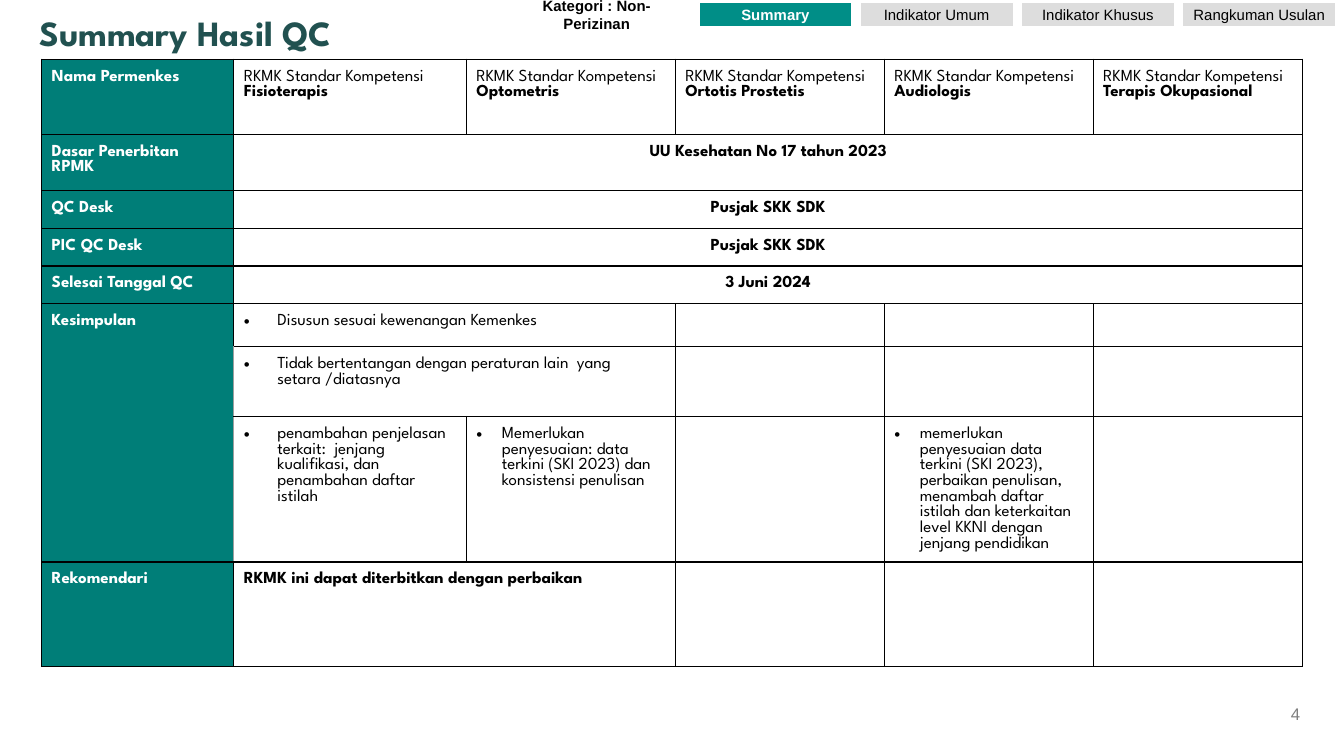
from pptx import Presentation, util as u
from pptx.dml.color import RGBColor
from pptx.enum import shapes, text
from pptx.oxml import parse_xml
from pptx.oxml.ns import nsdecls

HUES = {"head": "007E78", "live": "008E87", "tab": "DDDDDD", "title": "215150",
        "ink": "000000", "paper": "FFFFFF", "page": "7F7F7F", "soft": "9E9E9E"}
WIDE, TALL = 10, 10 * 9 / 16
SPAN = 9.38
COLS = [1.43, 1.73] + [(SPAN - 1.43 - 1.73) / 4] * 4
ROWS = [0.56, 0.42, 0.28, 0.28, 0.28, 0.32, 0.52, 0.97, 0.78]
TABS = ["Summary", "Indikator Umum", "Indikator Khusus", "Rangkuman Usulan"]
JOBS = ["Fisioterapis", "Optometris", "Ortotis Prostetis", "Audiologis", "Terapis Okupasional"]
HEADS = {0: "Nama Permenkes", 1: "Dasar Penerbitan RPMK", 2: "QC Desk", 3: "PIC QC Desk",
         4: "Selesai Tanggal QC", 5: "Kesimpulan", 8: "Rekomendari"}
FACTS = {1: "UU Kesehatan No 17 tahun 2023", 2: "Pusjak SKK SDK",
         3: "Pusjak SKK SDK", 4: "3 Juni 2024"}
NOTES = [
    (5, 1, 0.25, "Disusun sesuai kewenangan Kemenkes"),
    (6, 1, 0.25, "Tidak bertentangan dengan peraturan lain  yang setara /diatasnya"),
    (7, 1, 0.25, "penambahan penjelasan terkait:  jenjang kualifikasi, dan penambahan daftar istilah"),
    (7, 2, 0.19, "Memerlukan penyesuaian: data terkini (SKI 2023) dan konsistensi penulisan"),
    (7, 4, 0.19, "memerlukan penyesuaian data terkini (SKI 2023), perbaikan penulisan, menambah "
                 "daftar istilah dan keterkaitan level KKNI dengan jenjang pendidikan"),
]
SPANS = [(r, 1, r, 5) for r in FACTS] + [(r, 1, r, 2) for r in (5, 6, 8)] + [(5, 0, 7, 0)]
SIDES = ("left", "right", "top", "bottom")
INSET = 5.4


def hue(name):
    return RGBColor.from_string(HUES[name])


def put(obj, vals):
    for key, val in vals.items():
        setattr(obj, key, val)


def pad(obj, tall=INSET):
    put(obj, {"margin_" + s: u.Pt(tall if s in SIDES[2:] else INSET) for s in SIDES})


def write(par, words, color="ink", size=9, face="League Spartan", bold=False):
    run = par.add_run()
    run.text = words
    put(run.font, {"size": u.Pt(size), "name": face, "bold": bold})
    run.font.color.rgb = hue(color)


def frame(shape, words, align, tall=INSET, anchor=text.MSO_ANCHOR.MIDDLE, **look):
    box = shape.text_frame
    put(box, {"word_wrap": True, "auto_size": text.MSO_AUTO_SIZE.NONE, "vertical_anchor": anchor})
    pad(box, tall)
    par = box.paragraphs[0]
    par.alignment = align
    write(par, words, **look)
    return par


def label(slide, spot, words, align, **look):
    box = slide.shapes.add_textbox(*map(u.Inches, spot))
    frame(box, words, align, **look)


def tab(slide, num, words):
    live = num == 0
    spot = (5.2 + 1.2 * num, 0.02, 1.14, 0.18)
    box = slide.shapes.add_shape(shapes.MSO_SHAPE.RECTANGLE, *map(u.Inches, spot))
    box.shadow.inherit = False
    box.fill.solid()
    box.fill.fore_color.rgb = hue("live" if live else "tab")
    box.line.color.rgb = hue("paper")
    box.line.width = u.Pt(0.75)
    frame(box, words, text.PP_ALIGN.CENTER, size=8, face="Arial", bold=live,
          color="paper" if live else "ink")


def edge(cell, row, col):
    props = cell._tc.get_or_add_tcPr()
    for side in "LRTB":
        soft = row in (6, 7) and (side, col) in (("L", 1), ("R", 0))
        tint = HUES["soft" if soft else "ink"]
        props.append(parse_xml(
            f'<a:ln{side} {nsdecls("a")} w="9525"><a:solidFill>'
            f'<a:srgbClr val="{tint}"/></a:solidFill></a:ln{side}>'))


def dress(cell, row, col):
    pad(cell)
    edge(cell, row, col)
    if col:
        cell.fill.background()
    else:
        cell.fill.solid()
        cell.fill.fore_color.rgb = hue("head")
    end = parse_xml(f'<a:endParaRPr {nsdecls("a")} sz="900"/>')
    cell.text_frame.paragraphs[0]._p.append(end)


def bullet(par, dent):
    props = par._p.get_or_add_pPr()
    step = u.Inches(dent)
    props.set("marL", str(step))
    props.set("indent", str(-step))
    for part in (f'buClr {nsdecls("a")}><a:srgbClr val="{HUES["ink"]}"/></a:buClr',
                 f'buFont {nsdecls("a")} typeface="Arial"/',
                 f'buChar {nsdecls("a")} char="•"/'):
        props.append(parse_xml(f"<a:{part}>"))


def grid(slide):
    spot = (0.31, 0.44, SPAN, sum(ROWS))
    table = slide.shapes.add_table(len(ROWS), len(COLS), *map(u.Inches, spot)).table
    put(table, {"first_row": False, "horz_banding": False})
    for col, wide in zip(table.columns, COLS):
        col.width = u.Inches(wide)
    for row, tall in zip(table.rows, ROWS):
        row.height = u.Inches(tall)
    for row in range(len(ROWS)):
        for col in range(len(COLS)):
            dress(table.cell(row, col), row, col)
    for top, left, low, right in SPANS:
        table.cell(top, left).merge(table.cell(low, right))
    return table


def fill(table):
    def par(row, col):
        return table.cell(row, col).text_frame.paragraphs[0]

    for row, words in HEADS.items():
        write(par(row, 0), words, "paper", bold=True)
    for col, job in enumerate(JOBS, 1):
        write(par(0, col), "RKMK Standar Kompetensi ")
        write(par(0, col), job, bold=True)
    for row, words in FACTS.items():
        par(row, 1).alignment = text.PP_ALIGN.CENTER
        write(par(row, 1), words, bold=True)
    for row, col, dent, words in NOTES:
        bullet(par(row, col), dent)
        write(par(row, col), words)
    write(par(8, 1), "RKMK ini dapat diterbitkan dengan perbaikan", bold=True)


def main():
    """Build the quality check summary slide."""
    deck = Presentation()
    put(deck, {"slide_width": u.Inches(WIDE), "slide_height": u.Inches(TALL)})
    slide = deck.slides.add_slide(deck.slide_layouts[5])
    title = slide.shapes.title
    spot = map(u.Inches, (0.22, 0.14, 9.57, 0.3))
    put(title, dict(zip(("left", "top", "width", "height"), spot)))
    par = frame(title, "Summary Hasil QC", text.PP_ALIGN.LEFT, 2.7, text.MSO_ANCHOR.BOTTOM,
                color="title", size=19, bold=True)
    par.line_spacing = 0.9
    label(slide, (7.5, 5.16, 2.25, 0.3), "4", text.PP_ALIGN.RIGHT, tall=2.7,
          color="page", face="Arial")
    label(slide, (3.75, 0.02, 1.38, 0.18), "Kategori : Non-Perizinan", text.PP_ALIGN.CENTER,
          size=8, face="Arial", bold=True)
    fill(grid(slide))
    for num, words in enumerate(TABS):
        tab(slide, num, words)
    deck.save("out.pptx")


if __name__ == "__main__":
    main()
